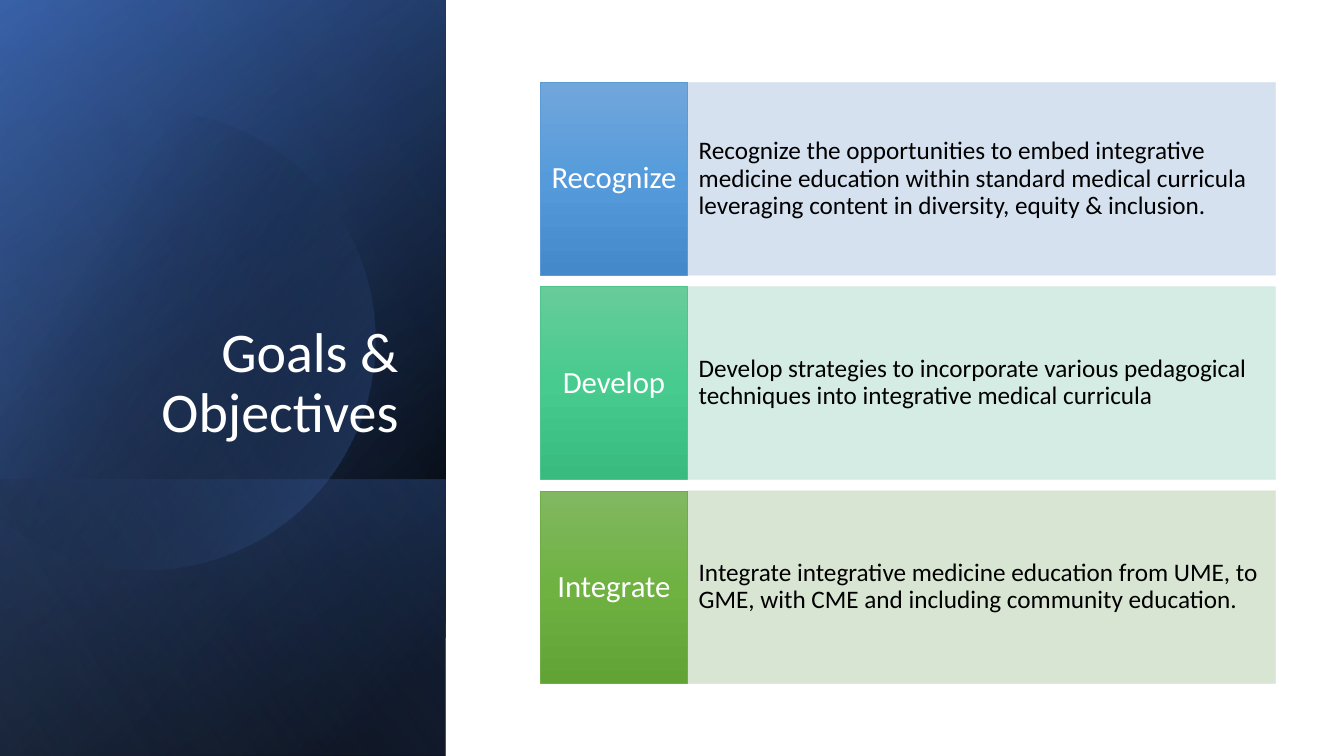
"""Build the Goals & Objectives slide."""
from dataclasses import dataclass
from math import acos, cos, sin

from lxml.etree import SubElement
from pptx import Presentation
from pptx.dml.color import RGBColor
from pptx.enum.shapes import MSO_SHAPE
from pptx.enum.text import MSO_ANCHOR, PP_ALIGN
from pptx.oxml import parse_xml
from pptx.oxml.ns import nsdecls, qn
from pptx.shapes.autoshape import Shape
from pptx.util import Inches, Pt


@dataclass
class Stop:
    pos: int
    color: str
    alpha: int = 100


@dataclass
class Panel:
    box: tuple[float, float, float, float]
    stops: list[Stop]
    angle: int


@dataclass
class Goal:
    label: str
    text: str
    tint: str
    edge: str
    shades: tuple[str, str, str]


SIDE = (-1.54, 1.54, 7.5, 4.42)
PANELS = [
    Panel(SIDE, [Stop(8, "000000"), Stop(100, "2F5597")], 50),
    Panel(SIDE, [Stop(0, "000000", 0), Stop(99, "4472C4", 46)], 30),
    Panel((0.84, 3.92, 2.74, 4.42), [Stop(2, "4472C4", 29), Stop(100, "000000", 30)], 130),
]
DISC_STOPS = [Stop(29, "000000", 0), Stop(100, "4472C4", 43)]
GLOW = Panel(SIDE, [Stop(0, "000000", 0), Stop(99, "8FAADC", 11)], 120)

GOALS = [
    Goal("Recognize",
         "Recognize the opportunities to embed integrative medicine education within "
         "standard medical curricula leveraging content in diversity, equity & inclusion.",
         "D2DEEF", "5B9BD5", ("71A6DB", "559BDB", "448ACA")),
    Goal("Develop",
         "Develop strategies to incorporate various pedagogical techniques into "
         "integrative medical curricula",
         "D0EAE1", "4DC58D", ("67CC9A", "47CB8E", "39BB7F")),
    Goal("Integrate",
         "Integrate integrative medicine education from UME, to GME, with CME and "
         "including community education.",
         "D5E3CF", "70AD47", ("81B861", "6FB242", "62A336")),
]
TOP, LEFT, LABEL_W, TEXT_W, ROW_H = 0.82, 5.36, 1.46, 5.83, 1.91
PITCH = (4.87 - TOP) / 2


def rgb(color: str) -> RGBColor:
    """Turn a hex string into a colour."""
    return RGBColor.from_string(color)


def add_rect(shapes, box: tuple[float, float, float, float]) -> Shape:
    """Add a rectangle without shadow."""
    sp = shapes.add_shape(MSO_SHAPE.RECTANGLE, *map(Inches, box))
    sp.shadow.inherit = False
    return sp


def set_gradient(sp: Shape, stops: list[Stop], angle: int) -> None:
    """Fill a shape with a linear gradient."""
    sp.fill.background()
    sp_pr = sp._element.spPr
    gs = "".join(
        f'<a:gs pos="{s.pos * 1000}"><a:srgbClr val="{s.color}">'
        f'<a:alpha val="{s.alpha * 1000}"/></a:srgbClr></a:gs>'
        for s in stops
    )
    grad = parse_xml(
        f'<a:gradFill {nsdecls("a")} rotWithShape="1"><a:gsLst>{gs}</a:gsLst>'
        f'<a:lin ang="{angle * 60000}" scaled="0"/></a:gradFill>'
    )
    sp_pr.replace(sp_pr.find(qn("a:noFill")), grad)


def set_line(sp: Shape, color: str) -> None:
    """Give a shape a thin outline."""
    sp.line.color.rgb = rgb(color)
    sp.line.width = Pt(0.5)


def add_panel(shapes, panel: Panel) -> None:
    """Add a turned, mirrored gradient panel."""
    sp = add_rect(shapes, panel.box)
    sp.rotation = 90
    sp._element.spPr.xfrm.set("flipH", "1")
    set_gradient(sp, panel.stops, panel.angle)
    sp.line.fill.background()


def add_disc(shapes) -> None:
    """Add the translucent disc, cut off at its left."""
    cx, cy, radius, cut = 1.44, 3.37, 2.28, -0.15
    end, steps = acos((cut - cx) / radius), 120
    angles = [end * (2 * i / steps - 1) for i in range(steps + 1)]
    points = [(Inches(cx + radius * cos(a)), Inches(cy + radius * sin(a))) for a in angles]
    builder = shapes.build_freeform(*points[0])
    builder.add_line_segments(points[1:], close=True)
    sp = builder.convert_to_shape()
    sp.shadow.inherit = False
    set_gradient(sp, DISC_STOPS, 30)
    sp.line.fill.background()


def write(sp: Shape, text: str, size: int, color: str, align: PP_ALIGN,
          anchor: MSO_ANCHOR, inset: tuple[float, float]) -> None:
    """Write one formatted paragraph into a shape."""
    tf = sp.text_frame
    x, y = map(Inches, inset)
    p = tf.paragraphs[0]
    r = p.add_run()
    r.text = text
    formats = [
        (tf, {"word_wrap": True, "vertical_anchor": anchor, "margin_left": x,
              "margin_right": x, "margin_top": y, "margin_bottom": y}),
        (p, {"alignment": align, "line_spacing": 0.9}),
        (r.font, {"name": "Calibri", "size": Pt(size)}),
    ]
    for target, values in formats:
        for name, value in values.items():
            setattr(target, name, value)
    r.font.color.rgb = rgb(color)


def add_goal(shapes, goal: Goal, top: float) -> None:
    """Add one row: a tinted text card and its label."""
    card = add_rect(shapes, (LEFT + LABEL_W, top, TEXT_W, ROW_H))
    card.fill.solid()
    card.fill.fore_color.rgb = rgb(goal.tint)
    set_line(card, goal.tint)
    for clr in card._element.spPr.iter(qn("a:srgbClr")):
        SubElement(clr, qn("a:alpha")).set("val", "90000")
    write(card, goal.text, 18, "000000", PP_ALIGN.LEFT, MSO_ANCHOR.MIDDLE, (0.11, 0.49))

    label = add_rect(shapes, (LEFT, top, LABEL_W, ROW_H))
    set_gradient(label, [Stop(50 * i, c) for i, c in enumerate(goal.shades)], 90)
    set_line(label, goal.edge)
    write(label, goal.label, 22, "FFFFFF", PP_ALIGN.CENTER, MSO_ANCHOR.MIDDLE, (0.08, 0.19))


def main() -> None:
    """Build and save the slide."""
    prs = Presentation()
    prs.slide_width, prs.slide_height = Inches(13.33), Inches(7.5)
    shapes = prs.slides.add_slide(prs.slide_layouts[6]).shapes
    for panel in PANELS:
        add_panel(shapes, panel)
    add_disc(shapes)
    add_panel(shapes, GLOW)
    title = shapes.add_textbox(*map(Inches, (0.64, 1.84, 3.41, 2.62)))
    write(title, "Goals & Objectives", 40, "FFFFFF", PP_ALIGN.RIGHT, MSO_ANCHOR.BOTTOM,
          (0.1, 0.05))
    for i, goal in enumerate(GOALS):
        add_goal(shapes, goal, TOP + i * PITCH)
    prs.save("out.pptx")


if __name__ == "__main__":
    main()
